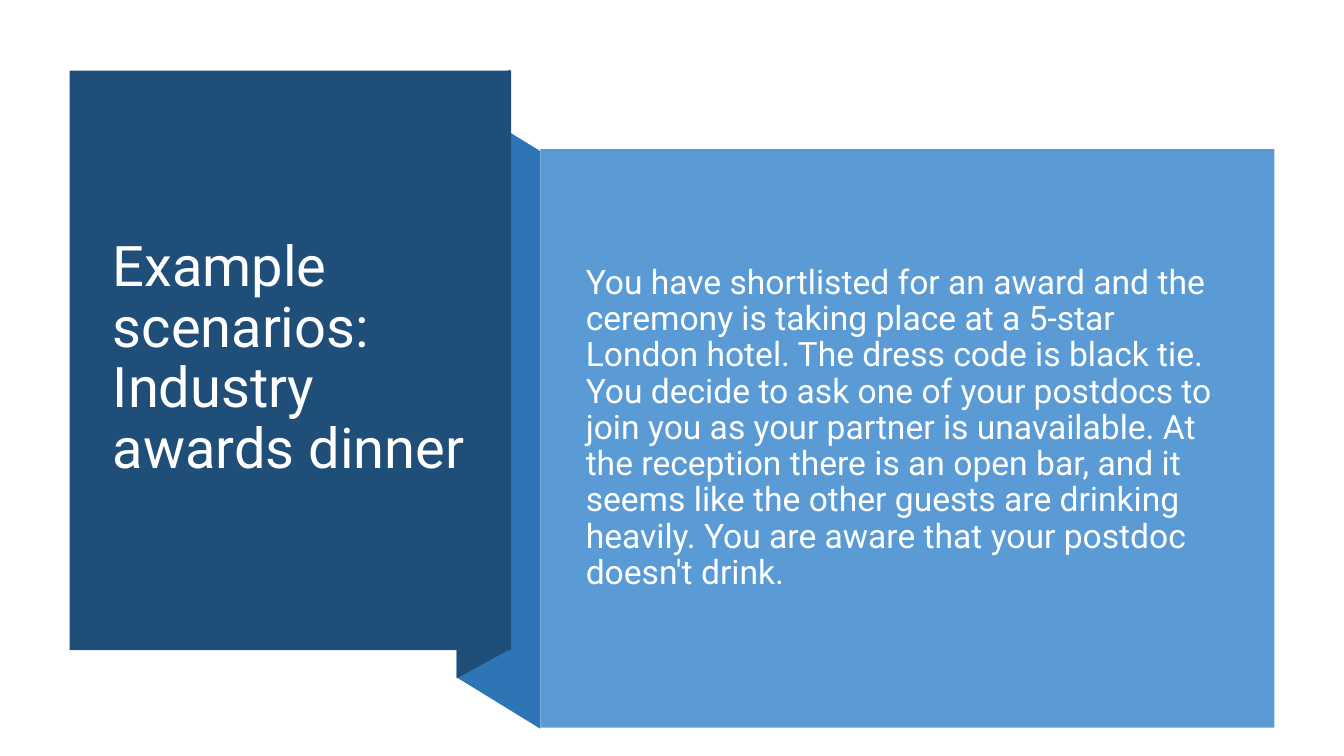
from lxml import etree
from pptx import Presentation
from pptx.dml.color import RGBColor
from pptx.enum.shapes import MSO_SHAPE
from pptx.enum.text import MSO_ANCHOR, MSO_AUTO_SIZE, PP_ALIGN
from pptx.oxml.ns import qn
from pptx.util import Inches, Pt

RECTANGLE = MSO_SHAPE.RECTANGLE
MIDDLE = MSO_ANCHOR.MIDDLE
NO_AUTOFIT = MSO_AUTO_SIZE.NONE
LEFT = PP_ALIGN.LEFT

NAVY = RGBColor(0x1F, 0x4E, 0x79)
BLUE = RGBColor(0x2E, 0x75, 0xB6)
SKY = RGBColor(0x5B, 0x9B, 0xD5)
WHITE = RGBColor(0xFF, 0xFF, 0xFF)
OFF_WHITE = RGBColor(0xFE, 0xFF, 0xFF)
FONT = "Roboto"

# Content
TITLE = "Example scenarios: Industry awards dinner"
SCENARIO = (
    "You have shortlisted for an award and the ceremony is taking place at a "
    "5-star London hotel. The dress code is black tie. You decide to ask one of "
    "your postdocs to join you as your partner is unavailable. At the reception "
    "there is an open bar, and it seems like the other guests are drinking "
    "heavily. You are aware that your postdoc doesn't drink."
)

# Layout in inches: left, top, width, height
TITLE_PANEL = (0.69, 0.7, 4.38, 5.75)
SCENARIO_PANEL = (5.36, 1.48, 7.28, 5.74)
TITLE_BOX = (1.02, 1.07, 3.71, 4.99)
SCENARIO_BOX = (5.71, 1.88, 6.51, 4.74)

# Ribbon folds: corner points, both meeting at the inner crease
CREASE = 4.53
BACK_FOLD = [(5.36, 7.23), (CREASE, 6.72), (CREASE, 0.99), (5.36, 1.5)]
FRONT_FOLD = [(5.06, 6.44), (CREASE, 6.73), (CREASE, 0.98), (5.06, 0.69)]


def paint(shape, color):
    shape.shadow.inherit = False
    shape.fill.solid()
    shape.fill.fore_color.rgb = color
    shape.line.fill.background()


def add_fold(slide, corners, color):
    points = [(Inches(x), Inches(y)) for x, y in corners]
    builder = slide.shapes.build_freeform(*points[0])
    builder.add_line_segments(points[1:], close=True)
    paint(builder.convert_to_shape(), color)


def add_panel(slide, box, color):
    paint(slide.shapes.add_shape(RECTANGLE, *map(Inches, box)), color)


def fill_placeholder(placeholder, box, text, size, color, space_before):
    placeholder.left, placeholder.top, placeholder.width, placeholder.height = map(Inches, box)
    frame = placeholder.text_frame
    frame.text = text
    frame.word_wrap = True
    frame.auto_size = NO_AUTOFIT
    frame.vertical_anchor = MIDDLE
    paragraph = frame.paragraphs[0]
    paragraph.alignment = LEFT
    paragraph.line_spacing = 0.9
    paragraph.space_before = Pt(space_before)
    font = paragraph.runs[0].font
    font.name, font.size, font.color.rgb = FONT, Pt(size), color
    # Plain paragraph without bullet or indent
    properties = paragraph.runs[0].font._element.getparent().getparent().find(qn("a:pPr"))
    properties.set("marL", "0")
    properties.set("indent", "0")
    etree.SubElement(properties, qn("a:buNone"))
    # Bring the text in front of its panel
    placeholder.element.getparent().append(placeholder.element)


def main():
    presentation = Presentation()
    presentation.slide_width = Inches(13.33)
    presentation.slide_height = Inches(7.5)
    slide = presentation.slides.add_slide(presentation.slide_layouts[1])
    title, body = slide.placeholders

    # Ribbon and title
    add_fold(slide, BACK_FOLD, BLUE)
    add_fold(slide, FRONT_FOLD, NAVY)
    add_panel(slide, TITLE_PANEL, NAVY)
    fill_placeholder(title, TITLE_BOX, TITLE, 40, WHITE, 0)

    # Scenario
    add_panel(slide, SCENARIO_PANEL, SKY)
    fill_placeholder(body, SCENARIO_BOX, SCENARIO, 24, OFF_WHITE, 10)

    presentation.save("out.pptx")


if __name__ == "__main__":
    main()
